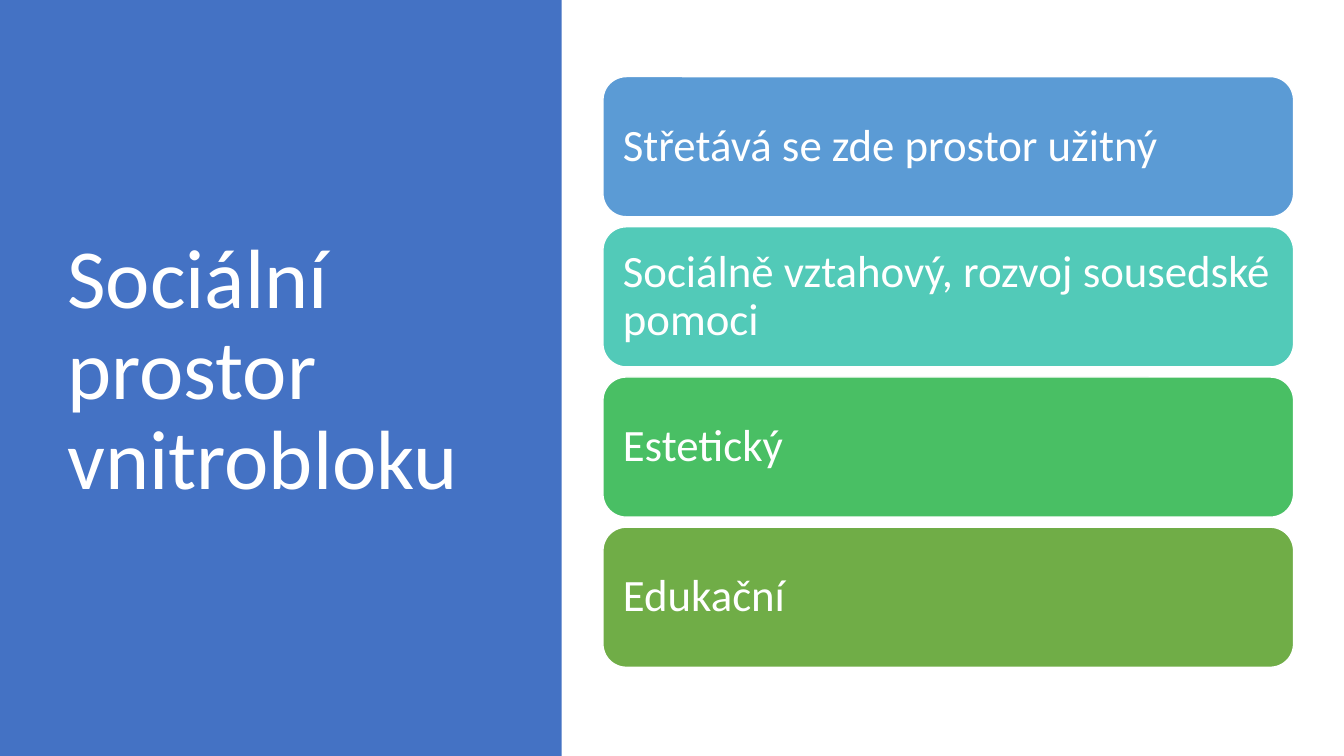
import pptx
import pptx.dml.color
import pptx.enum.shapes
import pptx.enum.text
import pptx.util
from pptx.util import Inches

WHITE = "FFFFFF"
CARD_TOP, CARD_HEIGHT, CARD_PITCH = 0.76, 1.39, 1.49
CARDS = [
    ("Střetává se zde prostor užitný", "5B9BD5"),
    ("Sociálně vztahový, rozvoj sousedské pomoci", "52CAB8"),
    ("Estetický", "49BF64"),
    ("Edukační", "70AD47"),
]


def color(hex_string):
    return pptx.dml.color.RGBColor.from_string(hex_string)


def write_text(shape, text, size):
    """Fill a shape with white, left-aligned, vertically centred text."""
    frame = shape.text_frame
    frame.word_wrap = True
    frame.vertical_anchor = pptx.enum.text.MSO_ANCHOR.MIDDLE
    paragraph = frame.paragraphs[0]
    paragraph.text = text
    paragraph.alignment = pptx.enum.text.PP_ALIGN.LEFT
    paragraph.line_spacing = 0.9
    paragraph.font.name = "Calibri"
    paragraph.font.size = pptx.util.Pt(size)
    paragraph.font.color.rgb = color(WHITE)


presentation = pptx.Presentation()
presentation.slide_width = Inches(13.33)
presentation.slide_height = Inches(7.5)
slide = presentation.slides.add_slide(presentation.slide_layouts[6])
shapes = slide.shapes
shape_types = pptx.enum.shapes.MSO_SHAPE

panel = shapes.add_shape(shape_types.RECTANGLE, 0, 0, Inches(5.57), Inches(7.5))
panel.shadow.inherit = False
panel.fill.solid()
panel.fill.fore_color.rgb = color("4472C4")
panel.line.fill.background()

title = shapes.add_textbox(Inches(0.57), Inches(0.68), Inches(4.16), Inches(6.02))
write_text(title, "Sociální prostor vnitrobloku", 60)

for index, (text, fill) in enumerate(CARDS):
    card = shapes.add_shape(
        shape_types.ROUNDED_RECTANGLE,
        Inches(5.98), Inches(CARD_TOP + index * CARD_PITCH),
        Inches(6.85), Inches(CARD_HEIGHT),
    )
    card.shadow.inherit = False
    card.fill.solid()
    card.fill.fore_color.rgb = color(fill)
    card.line.color.rgb = color(WHITE)
    card.line.width = pptx.util.Pt(1)
    frame = card.text_frame
    frame.margin_left = frame.margin_right = Inches(0.13)
    frame.margin_top = frame.margin_bottom = Inches(0.13)
    write_text(card, text, 32)

presentation.save("out.pptx")
